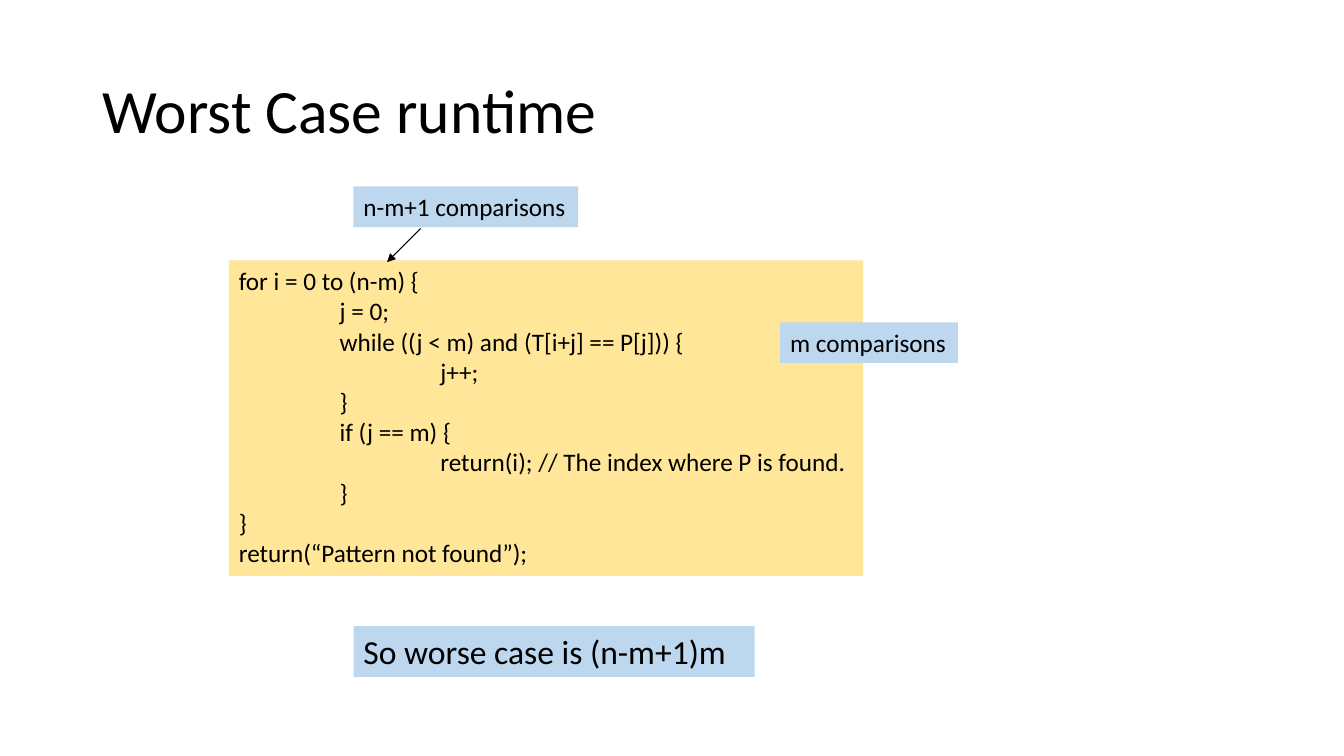
import dataclasses

import pptx
import pptx.dml.color
import pptx.enum.shapes
import pptx.enum.text
import pptx.oxml.ns
import pptx.util
import lxml.etree

Pt = pptx.util.Pt
RGB = pptx.dml.color.RGBColor


@dataclasses.dataclass(frozen=True)
class Theme:
    font: str = "Calibri"
    ink: RGB = RGB(0x00, 0x00, 0x00)
    code_fill: RGB = RGB(0xFF, 0xE6, 0x99)
    note_fill: RGB = RGB(0xBD, 0xD7, 0xEE)
    title_size: float = 44
    body_size: float = 18
    result_size: float = 24
    arrow_width: float = 0.75
    tab_width: float = 72


THEME = Theme()

SEARCH_CODE = """for i = 0 to (n-m) {
\tj = 0;
\twhile ((j < m) and (T[i+j] == P[j])) {
\t\tj++;
\t}
\tif (j == m) {
\t\treturn(i); // The index where P is found.
\t}
}
return(“Pattern not found”);"""


def format_runs(text_frame, size):
    for paragraph in text_frame.paragraphs:
        for run in paragraph.runs:
            run.font.name = THEME.font
            run.font.size = Pt(size)
            run.font.color.rgb = THEME.ink


def place_title(slide, text, left, top, width, height):
    title = slide.shapes.title
    title.left, title.top, title.width, title.height = map(Pt, (left, top, width, height))
    frame = title.text_frame
    frame.text = text
    frame.word_wrap = True
    frame.vertical_anchor = pptx.enum.text.MSO_ANCHOR.MIDDLE
    frame.paragraphs[0].alignment = pptx.enum.text.PP_ALIGN.LEFT
    frame.paragraphs[0].line_spacing = 0.9
    format_runs(frame, THEME.title_size)


def add_filled_text(slide, text, left, top, width, height, fill, size):
    panel = slide.shapes.add_textbox(Pt(left), Pt(top), Pt(width), Pt(height))
    panel.fill.solid()
    panel.fill.fore_color.rgb = fill
    panel.text_frame.text = text
    panel.text_frame.word_wrap = True
    format_runs(panel.text_frame, size)
    return panel


def set_tab_width(text_frame, width):
    for paragraph in text_frame.paragraphs:
        paragraph._p.get_or_add_pPr().set("defTabSz", str(Pt(width)))


def add_arrow(slide, start, end):
    arrow = slide.shapes.add_connector(
        pptx.enum.shapes.MSO_CONNECTOR.STRAIGHT, *map(Pt, start + end))
    arrow.line.color.rgb = THEME.ink
    arrow.line.width = Pt(THEME.arrow_width)
    qn = pptx.oxml.ns.qn
    line_xml = arrow.line._get_or_add_ln()
    lxml.etree.SubElement(line_xml, qn("a:tailEnd"), type="triangle")
    lxml.etree.SubElement(arrow._element.spPr, qn("a:effectLst"))


def main():
    deck = pptx.Presentation()
    deck.slide_width, deck.slide_height = Pt(960), Pt(540)
    slide = deck.slides.add_slide(deck.slide_layouts.get_by_name("Title Only"))

    # Heading
    place_title(slide, "Worst Case runtime", 66, 28.75, 828, 104.4)

    # Search algorithm
    search = add_filled_text(slide, SEARCH_CODE, 163.5, 186, 453, 225.4,
                             THEME.code_fill, THEME.body_size)
    set_tab_width(search.text_frame, THEME.tab_width)

    # Loop counts
    add_arrow(slide, (300.5, 163.2), (276.5, 187.2))
    for count, left, top, width in (("n-m+1 comparisons", 252.5, 133.2, 160.5),
                                    ("m comparisons", 557.3, 230.3, 127)):
        add_filled_text(slide, count, left, top, width, 29,
                        THEME.note_fill, THEME.body_size)

    # Resulting bound
    add_filled_text(slide, "So worse case is (n-m+1)m", 252.5, 447.2, 286.5, 36.3,
                    THEME.note_fill, THEME.result_size)

    deck.save("out.pptx")


if __name__ == "__main__":
    main()
